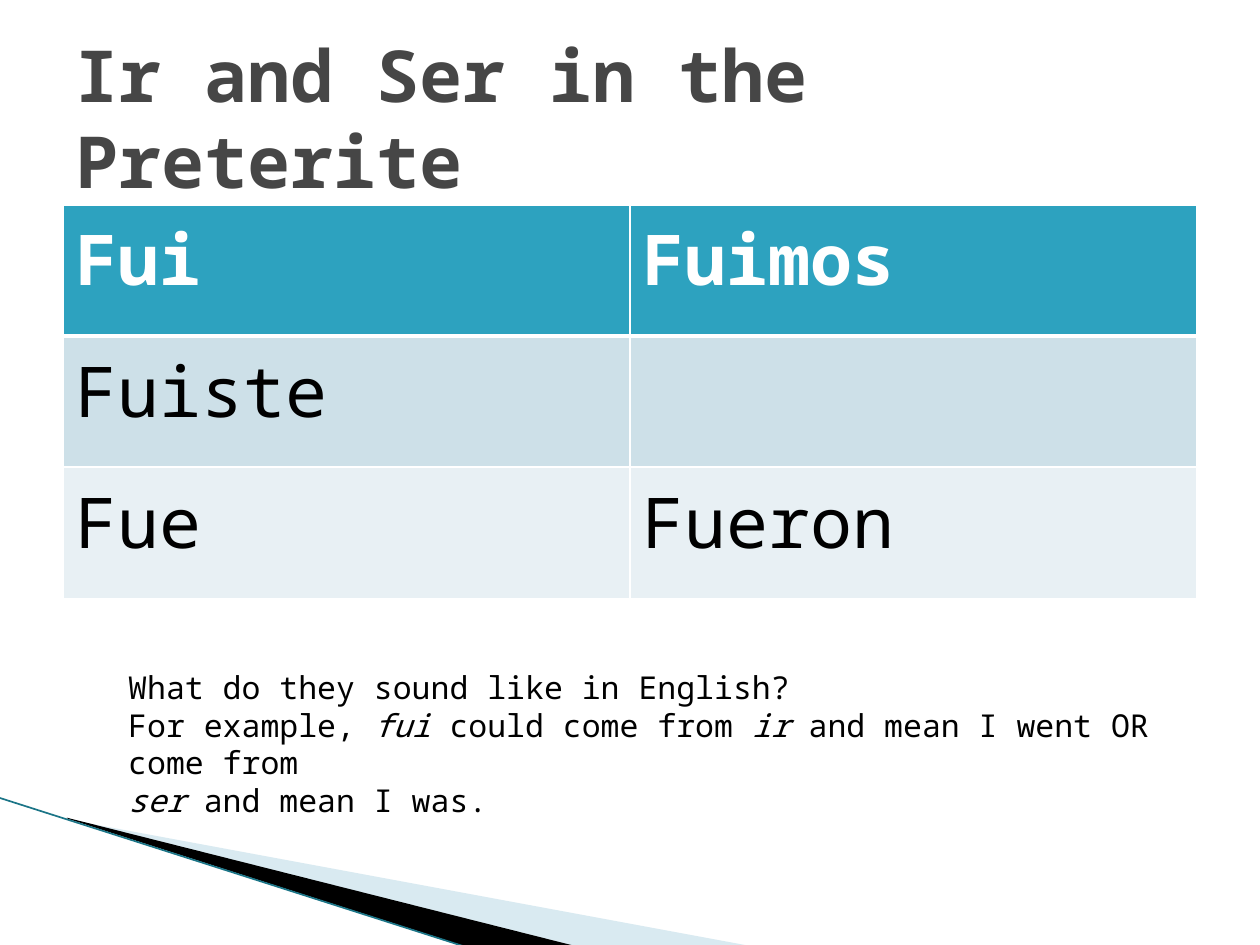
"""Build a slide on the preterite forms of ir and ser."""
from dataclasses import dataclass

from lxml.etree import SubElement
from pptx import Presentation
from pptx.dml.color import RGBColor
from pptx.enum.shapes import MSO_CONNECTOR as Connector
from pptx.enum.text import MSO_ANCHOR as Anchor, MSO_AUTO_SIZE as AutoSize
from pptx.oxml.ns import qn
from pptx.util import Pt


@dataclass(frozen=True)
class Theme:
    font: str = "Noto Sans Mono"
    title: str = "464646"
    text: str = "000000"
    white: str = "FFFFFF"
    header: str = "2DA2BF"
    bands: tuple = ("CDE0E8", "E8F0F4")
    wedge: str = "A0CBDC"
    edge: str = "1B7587"
    title_size: int = 41
    table_size: int = 40
    note_size: int = 18


theme = Theme()


def add_span(para, text, size, color, bold=False, italic=False):
    span = para.add_run()
    span.text = text
    span.font.name = theme.font
    span.font.size = Pt(size)
    span.font.bold = bold
    span.font.italic = italic
    span.font.color.rgb = RGBColor.from_string(color)


def add_border(cell, side, width):
    line = SubElement(cell._tc.get_or_add_tcPr(), qn(f"a:{side}"), w=str(Pt(width)))
    fill = SubElement(line, qn("a:solidFill"))
    SubElement(fill, qn("a:srgbClr"), val=theme.white)


deck = Presentation()
deck.slide_width, deck.slide_height = Pt(720), Pt(540)
page = deck.slides.add_slide(deck.slide_layouts[5])

wedges = [
    (theme.wedge, 40, [(39.6, 468.5), (428.4, 540.5), (328.3, 540.5), (39.6, 468)]),
    (theme.text, 100, [(38.2, 467.3), (329, 540.7), (267.8, 541.4), (38.9, 468)]),
]
for color, opacity, points in wedges:
    start, *rest = [(Pt(x), Pt(y)) for x, y in points]
    builder = page.shapes.build_freeform(*start)
    builder.add_line_segments(rest, close=True)
    wedge = builder.convert_to_shape()
    wedge.shadow.inherit = False
    wedge.fill.solid()
    wedge.fill.fore_color.rgb = RGBColor.from_string(color)
    wedge.line.fill.background()
    if opacity < 100:
        tint = wedge._element.spPr.find(qn("a:solidFill"))[0]
        SubElement(tint, qn("a:alpha"), val=str(opacity * 1000))

edge = page.shapes.add_connector(
    Connector.STRAIGHT, Pt(-0.7), Pt(455.8), Pt(267.1), Pt(541.4)
)
edge.line.color.rgb = RGBColor.from_string(theme.edge)
edge.line.width = Pt(0.95)
SubElement(edge._element.spPr, qn("a:effectLst"))

forms = [("Fui", "Fuimos"), ("Fuiste", ""), ("Fue", "Fueron")]
fills = (theme.header, *theme.bands)
table = page.shapes.add_table(3, 2, Pt(36), Pt(117), Pt(648), Pt(225)).table
for row, (words, fill) in enumerate(zip(forms, fills)):
    is_header = row == 0
    for column, word in enumerate(words):
        cell = table.cell(row, column)
        for side in ("lnL", "lnR", "lnT", "lnB"):
            meets_header = (row, side) in ((0, "lnB"), (1, "lnT"))
            add_border(cell, side, 3 if meets_header else 1)
        cell.fill.solid()
        cell.fill.fore_color.rgb = RGBColor.from_string(fill)
        if word:
            color = theme.white if is_header else theme.text
            para = cell.text_frame.paragraphs[0]
            add_span(para, word, theme.table_size, color, bold=is_header)

title = page.shapes.title
title.left, title.top, title.width, title.height = Pt(36), Pt(21.6), Pt(648), Pt(90)
title.text_frame.word_wrap = True
title.text_frame.auto_size = AutoSize.NONE
title.text_frame.vertical_anchor = Anchor.MIDDLE
para = title.text_frame.paragraphs[0]
para.alignment = 1
add_span(para, "Ir and Ser in the Preterite", theme.title_size, theme.title, bold=True)

note = [
    [("What do they sound like in English?", False)],
    [
        ("For example, ", False),
        ("fui", True),
        (" could come from ", False),
        ("ir", True),
        (" and mean I went OR come from", False),
    ],
    [("ser", True), (" and mean I was.", False)],
]
box = page.shapes.add_textbox(Pt(66.2), Pt(378), Pt(622.8), Pt(72.7))
box.text_frame.word_wrap = True
for index, spans in enumerate(note):
    para = box.text_frame.add_paragraph() if index else box.text_frame.paragraphs[0]
    for text, italic in spans:
        add_span(para, text, theme.note_size, theme.text, italic=italic)

deck.save("out.pptx")
